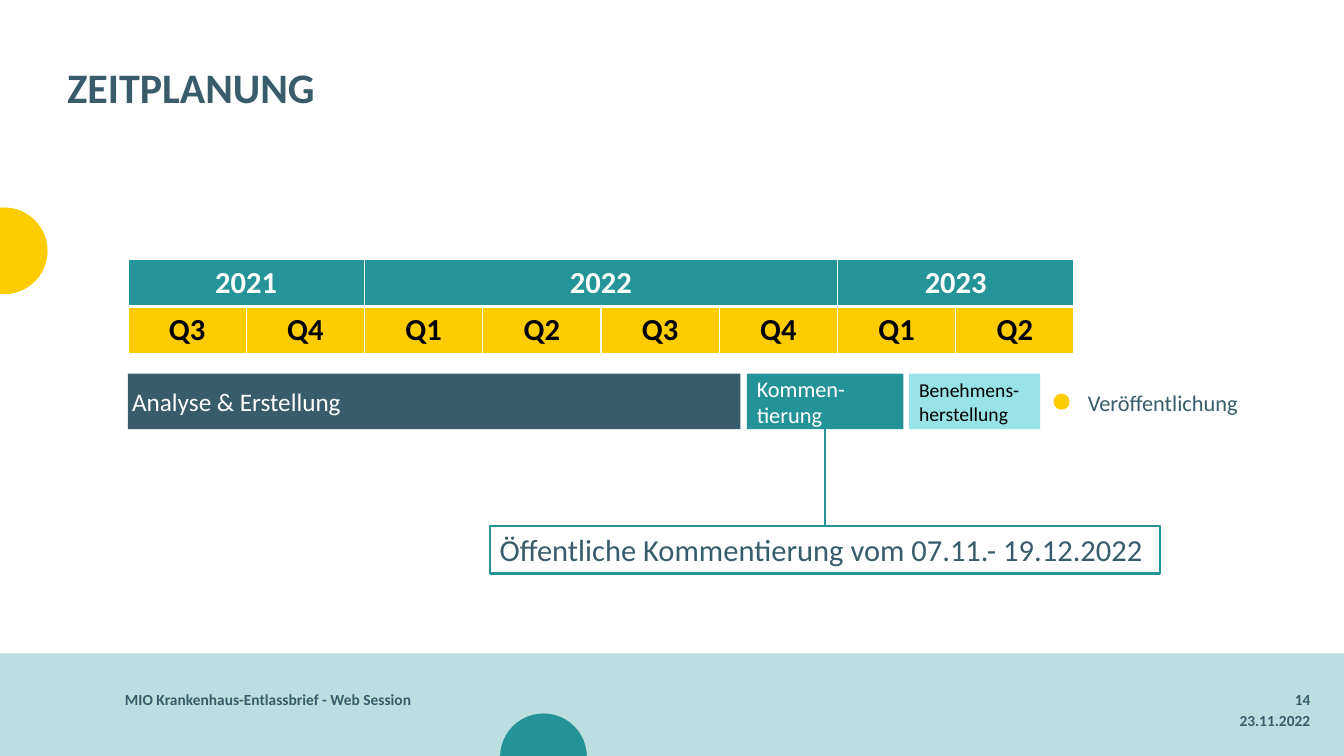
from dataclasses import dataclass
from typing import Optional

from lxml.etree import SubElement
from pptx import Presentation
from pptx.dml.color import RGBColor as RGB
from pptx.enum.shapes import MSO_CONNECTOR as Conn, MSO_SHAPE as Shp
from pptx.enum.text import MSO_ANCHOR as Anchor, PP_ALIGN as Align
from pptx.oxml.ns import qn
from pptx.util import Pt


@dataclass(frozen=True)
class Theme:
    font: str = "Calibri"
    slate: str = "385C6B"
    teal: str = "239398"
    line: str = "249499"
    aqua: str = "97E3E7"
    band: str = "BDDEE0"
    yellow: str = "FFCC00"
    white: str = "FFFFFF"
    black: str = "000000"
    title: float = 30
    large: float = 21.8
    phase: float = 18
    label: float = 16
    small: float = 14
    footer: float = 11


T = Theme()


@dataclass(frozen=True)
class Box:
    x: float
    y: float
    w: float
    h: float
    text: str = ""
    size: float = T.footer
    color: str = T.slate
    bold: bool = False
    fill: Optional[str] = None
    line: Optional[str] = None
    shape: Optional[Shp] = None  # None makes a plain text box
    align: Align = Align.LEFT
    anchor: Anchor = Anchor.TOP
    inset: Optional[float] = None  # None keeps the default margins
    spacing: float = 1.0


# Slide furniture behind the content
BACKDROP = [
    Box(0, 466.6, 960, 73.4, fill=T.band, shape=Shp.RECTANGLE),
    Box(-28, 148.2, 62, 62, fill=T.yellow, shape=Shp.OVAL),
    Box(357.2, 509.6, 62, 62, fill=T.teal, shape=Shp.OVAL),
]

# Project phases below the calendar
PHASE_Y, PHASE_H = 266.9, 39.7
PHASES = [
    Box(91.4, PHASE_Y, 437.5, PHASE_H, "Analyse & Erstellung", T.phase, T.white,
        fill=T.slate, shape=Shp.RECTANGLE, anchor=Anchor.MIDDLE, inset=3),
    Box(533.5, PHASE_Y, 111.8, PHASE_H, "Kommen-tierung", T.label, T.white,
        fill=T.teal, shape=Shp.RECTANGLE, anchor=Anchor.MIDDLE),
    Box(649.4, PHASE_Y, 93.6, PHASE_H, "Benehmens-herstellung", T.small, T.black,
        fill=T.aqua, shape=Shp.RECTANGLE, anchor=Anchor.MIDDLE),
    Box(752.5, 281.2, 11.5, 11.5, fill=T.yellow, shape=Shp.OVAL),
    Box(774, 263.5, 140.4, 47.5, "Veröffentlichung", T.label,
        anchor=Anchor.MIDDLE, inset=3),
]

CALLOUT = Box(349.9, 375.8, 479, 33.9,
              "Öffentliche Kommentierung vom 07.11.- 19.12.2022", T.large,
              line=T.line, shape=Shp.RECTANGLE)

TEXTS = [
    Box(48.2, 48.2, 864, 37.4, "ZEITPLANUNG", T.title, bold=True, inset=0,
        spacing=0.9),
    Box(89.3, 493.2, 304.6, 27.4, "MIO Krankenhaus-Entlassbrief - Web Session",
        bold=True, inset=0),
    Box(764.6, 493.2, 171.4, 16.6, "14", bold=True, align=Align.RIGHT, inset=0),
    Box(764.6, 507.6, 171.4, 13.7, "23.11.2022", bold=True, align=Align.RIGHT,
        inset=0),
]

# Calendar: each year with its quarters
YEARS = {"2021": ["Q3", "Q4"], "2022": ["Q1", "Q2", "Q3", "Q4"],
         "2023": ["Q1", "Q2"]}
CAL_X, CAL_Y, COL_W, ROW_H = 91.4, 185, 84.5, 33.5


def write(tf, text: str, size: float, color: str, bold: bool, align: Align,
          spacing: float = 1.0) -> None:
    p = tf.paragraphs[0]
    for name, value in {"alignment": align, "line_spacing": spacing}.items():
        setattr(p, name, value)
    r = p.add_run()
    r.text = text
    for name, value in {"name": T.font, "size": Pt(size), "bold": bold}.items():
        setattr(r.font, name, value)
    r.font.color.rgb = RGB.from_string(color)


def draw_box(s, box: Box) -> None:
    frame = [Pt(v) for v in (box.x, box.y, box.w, box.h)]
    if box.shape is None:
        sp = s.shapes.add_textbox(*frame)
    else:
        sp = s.shapes.add_shape(box.shape, *frame)
        sp.shadow.inherit = False
        if box.fill:
            sp.fill.solid()
            sp.fill.fore_color.rgb = RGB.from_string(box.fill)
        else:
            sp.fill.background()
        if box.line:
            sp.line.color.rgb = RGB.from_string(box.line)
            sp.line.width = Pt(1.5)
        else:
            sp.line.fill.background()
    if not box.text:
        return
    tf = sp.text_frame
    fmt = {"word_wrap": True, "vertical_anchor": box.anchor}
    if box.inset is not None:
        fmt |= {f"margin_{side}": Pt(box.inset)
                for side in ("left", "top", "right", "bottom")}
    for name, value in fmt.items():
        setattr(tf, name, value)
    write(tf, box.text, box.size, box.color, box.bold, box.align, box.spacing)


def style_cell(cell, fill: str, widths: dict[str, float]) -> None:
    # Borders have to come before the fill in the cell properties
    tc_pr = cell._tc.get_or_add_tcPr()
    for side in ("L", "R", "T", "B"):
        ln = SubElement(tc_pr, qn(f"a:ln{side}"), w=str(Pt(widths.get(side, 1))))
        SubElement(SubElement(ln, qn("a:solidFill")), qn("a:srgbClr"), val=T.white)
    cell.fill.solid()
    cell.fill.fore_color.rgb = RGB.from_string(fill)


def draw_calendar(s) -> None:
    quarters = [q for names in YEARS.values() for q in names]
    n = len(quarters)
    table = s.shapes.add_table(2, n, Pt(CAL_X), Pt(CAL_Y), Pt(n * COL_W),
                               Pt(2 * ROW_H)).table
    for col in table.columns:
        col.width = Pt(COL_W)
    for row in table.rows:
        row.height = Pt(ROW_H)
    for i, quarter in enumerate(quarters):
        style_cell(table.cell(0, i), T.line, {"B": 3})
        style_cell(table.cell(1, i), T.yellow, {"T": 3})
        write(table.cell(1, i).text_frame, quarter, T.large, T.black, True,
              Align.CENTER)
    start = 0
    for year, names in YEARS.items():
        cell = table.cell(0, start)
        cell.merge(table.cell(0, start + len(names) - 1))
        write(cell.text_frame, year, T.large, T.white, True, Align.CENTER)
        start += len(names)


def draw_link(s, upper: Box, lower: Box) -> None:
    x = Pt(upper.x + upper.w / 2)
    cx = s.shapes.add_connector(Conn.STRAIGHT, x, Pt(upper.y + upper.h), x,
                                Pt(lower.y))
    cx.line.color.rgb = RGB.from_string(T.line)
    cx.line.width = Pt(1.5)
    SubElement(cx._element.spPr, qn("a:effectLst"))


def main() -> None:
    prs = Presentation()
    prs.slide_width, prs.slide_height = Pt(960), Pt(540)
    s = prs.slides.add_slide(prs.slide_layouts[6])
    for box in BACKDROP:
        draw_box(s, box)
    draw_calendar(s)
    for box in [*PHASES, CALLOUT, *TEXTS]:
        draw_box(s, box)
    draw_link(s, PHASES[1], CALLOUT)
    prs.save("out.pptx")


if __name__ == "__main__":
    main()
